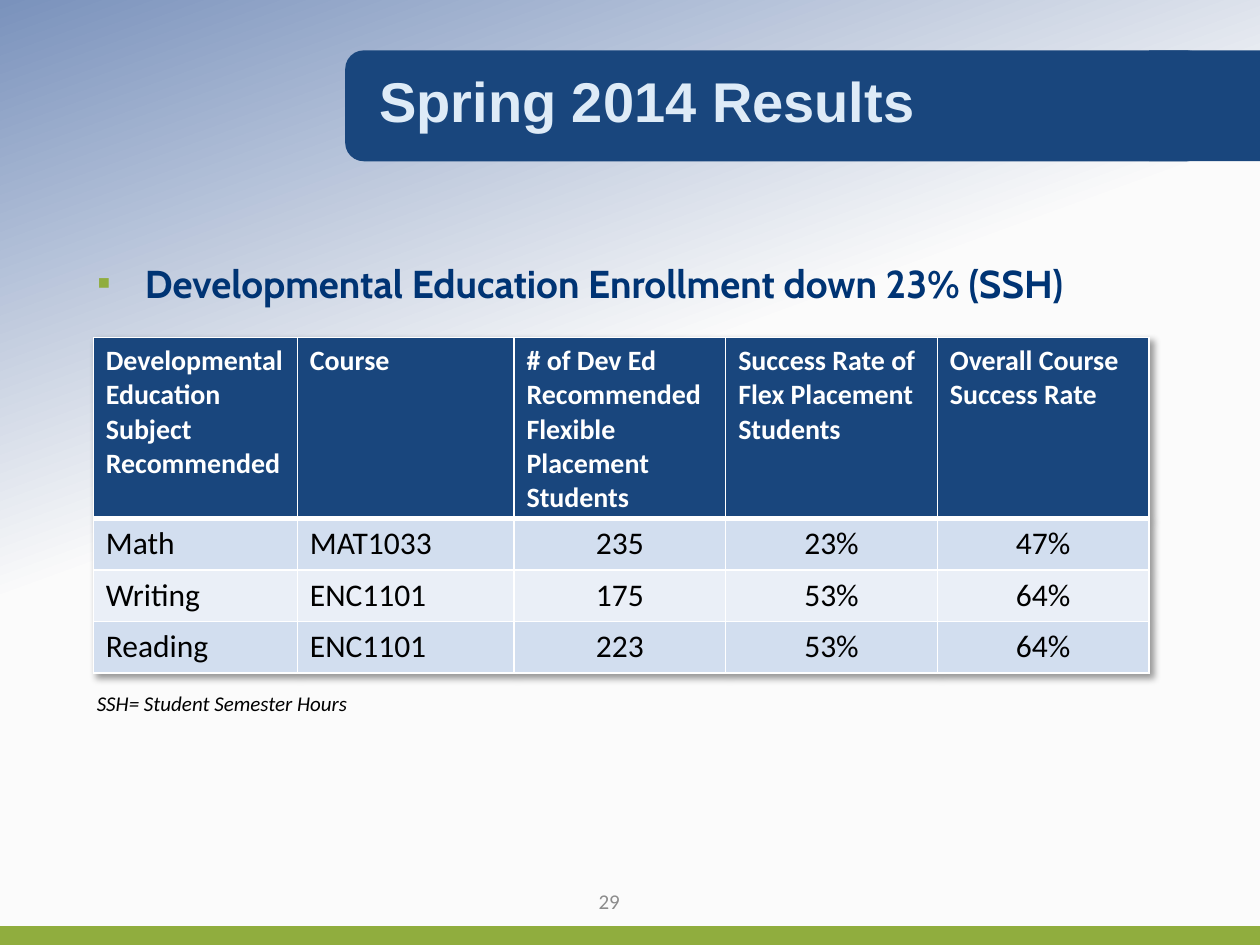
from lxml import etree
from pptx import Presentation
from pptx import util as u
from pptx.dml.color import RGBColor
from pptx.enum import shapes, text
from pptx.oxml import ns, parse_xml

COLORS = {
    "navy": "19467D", "green": "90AD3E", "sky": "7A92BC", "paper": "FBFBFB",
    "title": "DEEBF7", "body": "003474", "gray": "8C8C8C", "black": "000000",
    "white": "FFFFFF", "band": "D2DEEF", "pale": "EAEFF7",
}
HEADERS = [
    "Developmental Education Subject Recommended",
    "Course",
    "# of Dev Ed Recommended Flexible Placement Students",
    "Success Rate of Flex Placement Students",
    "Overall Course Success Rate",
]
RESULTS = [
    ["Math", "MAT1033", "235", "23%", "47%"],
    ["Writing", "ENC1101", "175", "53%", "64%"],
    ["Reading", "ENC1101", "223", "53%", "64%"],
]
COLUMN_WIDTHS = [1.62, 1.72, 1.68, 1.68, 1.68]
HEADER_HEIGHT, ROW_HEIGHT = 1.43, 0.41
LEFT, CENTER = text.PP_ALIGN.LEFT, text.PP_ALIGN.CENTER


def color(name):
    return RGBColor.from_string(COLORS[name])


def place(shape, box):
    for name, value in zip(("left", "top", "width", "height"), box):
        setattr(shape, name, u.Inches(value))


def write(paragraph, words, color_name, alignment=LEFT, **font):
    run = paragraph.add_run()
    run.text = words
    paragraph.alignment = alignment
    font["size"] = u.Pt(font["size"])
    for name, value in font.items():
        setattr(run.font, name, value)
    run.font.color.rgb = color(color_name)


def add_block(slide, kind, box, color_name):
    shape = slide.shapes.add_shape(kind, *map(u.Inches, box))
    shape.shadow.inherit = False
    shape.fill.solid()
    shape.fill.fore_color.rgb = color(color_name)
    shape.line.fill.background()
    return shape


def paint_background(slide):
    fill = slide.background.fill
    fill.gradient()
    fill.gradient_angle = 290
    for stop, (name, position) in zip(fill.gradient_stops, [("sky", 0), ("paper", 0.43)]):
        stop.color.rgb = color(name)
        stop.position = position


def add_banner(slide, box):
    left, top, width, height = box
    kinds = shapes.MSO_SHAPE
    add_block(slide, kinds.ROUNDED_RECTANGLE, (left, top, width - 0.43, height), "navy")
    add_block(slide, kinds.RECTANGLE, (left + width - height, top, height, height), "navy")


def add_title(slide, box):
    title = slide.shapes.title
    place(title, box)
    frame = title.text_frame
    frame.vertical_anchor = text.MSO_ANCHOR.MIDDLE
    paragraph = frame.paragraphs[0]
    paragraph.line_spacing = 0.9
    write(paragraph, "Spring 2014 Results", "title", size=32, name="Arial", bold=True)


def add_body(slide, box):
    body = slide.placeholders[1]
    place(body, box)
    paragraph = body.text_frame.paragraphs[0]
    paragraph.line_spacing = 0.8
    paragraph.space_before = u.Pt(0)
    properties = paragraph._p.get_or_add_pPr()
    indent = u.Inches(0.38)
    properties.set("marL", str(indent))
    properties.set("indent", str(-indent))
    bullet_color = etree.SubElement(properties, ns.qn("a:buClr"))
    etree.SubElement(bullet_color, ns.qn("a:srgbClr"), val=COLORS["green"])
    etree.SubElement(properties, ns.qn("a:buChar"), char="▪")
    write(paragraph, "Developmental Education Enrollment down 23% (SSH)", "body",
          size=22.2, name="Cabin", bold=True)


def add_label(slide, box, words, color_name, wrap=True, **style):
    frame = slide.shapes.add_textbox(*map(u.Inches, box)).text_frame
    frame.word_wrap = wrap
    frame.vertical_anchor = text.MSO_ANCHOR.MIDDLE
    write(frame.paragraphs[0], words, color_name, size=12, name="Calibri", **style)


def add_borders(cell, bottom_width):
    properties = cell._tc.get_or_add_tcPr()
    widths = {"lnL": 1, "lnR": 1, "lnT": 1, "lnB": bottom_width}
    for index, (side, width) in enumerate(widths.items()):
        line = etree.Element(ns.qn(f"a:{side}"), w=str(u.Pt(width)))
        fill = etree.SubElement(line, ns.qn("a:solidFill"))
        etree.SubElement(fill, ns.qn("a:srgbClr"), val=COLORS["white"])
        properties.insert(index, line)


def add_table_shadow(table):
    table._tbl.tblPr.insert(0, parse_xml(
        f'<a:effectLst {ns.nsdecls("a")}><a:outerShdw blurRad="{u.Pt(4)}" '
        f'dist="{u.Pt(3)}" dir="2700000" algn="tl" rotWithShape="0">'
        f'<a:srgbClr val="{COLORS["black"]}"><a:alpha val="40000"/></a:srgbClr>'
        '</a:outerShdw></a:effectLst>'))


def add_results_table(slide, box):
    rows = [HEADERS] + RESULTS
    table = slide.shapes.add_table(len(rows), len(HEADERS), *map(u.Inches, box)).table
    add_table_shadow(table)
    for column, width in zip(table.columns, COLUMN_WIDTHS):
        column.width = u.Inches(width)
    for row_index, values in enumerate(rows):
        header = row_index == 0
        table.rows[row_index].height = u.Inches(HEADER_HEIGHT if header else ROW_HEIGHT)
        fill_name = "navy" if header else ("pale", "band")[row_index % 2]
        for column_index, words in enumerate(values):
            cell = table.cell(row_index, column_index)
            cell.fill.solid()
            cell.fill.fore_color.rgb = color(fill_name)
            add_borders(cell, 3 if header else 1)
            write(cell.text_frame.paragraphs[0], words, "white" if header else "black",
                  LEFT if header or column_index < 2 else CENTER,
                  size=16 if header else 18, name="Calibri", bold=header)


def main():
    presentation = Presentation()
    presentation.slide_width, presentation.slide_height = u.Inches(10), u.Inches(7.5)
    slide = presentation.slides.add_slide(presentation.slide_layouts[1])
    paint_background(slide)
    add_block(slide, shapes.MSO_SHAPE.RECTANGLE, (0, 7.35, 10, 0.15), "green")
    add_banner(slide, (2.74, 0.4, 7.26, 0.88))
    add_label(slide, (3.71, 6.95, 2.25, 0.4), "29", "gray", alignment=CENTER)
    add_body(slide, (0.67, 2.08, 8.62, 0.65))
    add_label(slide, (0.67, 5.43, 2.5, 0.3), "SSH= Student Semester Hours", "black",
              wrap=False, italic=True)
    add_results_table(slide, (0.74, 2.68, 8.38, 2.66))
    add_title(slide, (2.91, 0.54, 6.89, 0.57))
    title = slide.shapes.title._element
    title.getparent().append(title)
    presentation.save("out.pptx")


if __name__ == "__main__":
    main()
